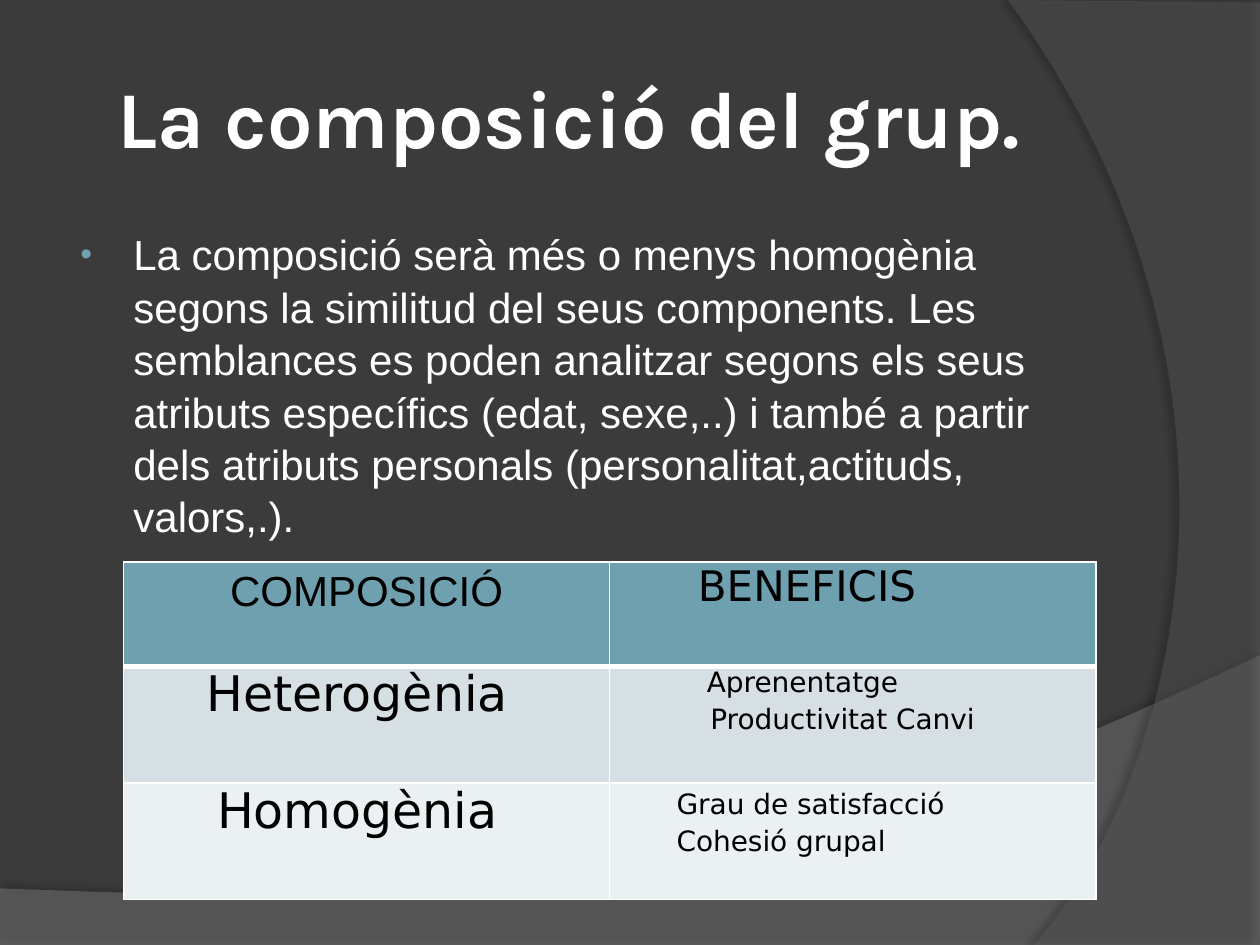
"""Build the slide on group composition, with its benefits table."""
from lxml import etree
from pptx import Presentation
from pptx.dml.color import RGBColor
from pptx.enum.text import MSO_ANCHOR, PP_ALIGN
from pptx.oxml.ns import qn
from pptx.util import Cm, Pt

CENTER, LEFT = PP_ALIGN.CENTER, PP_ALIGN.LEFT
MIDDLE = MSO_ANCHOR.MIDDLE
WHITE, BLACK, ACCENT = "FFFFFF", "000000", "6EA0B0"
BODY_FONT, TABLE_FONT = "Arial", "DejaVu Sans"

TITLE = "La composició del grup."
BODY = ("La composició serà més o menys homogènia segons la similitud del seus components. "
        "Les semblances es poden analitzar segons els seus atributs específics (edat, sexe,..) "
        "i també a partir dels atributs personals (personalitat,actituds, valors,.).")

WAVES = [
    {"start": (0, 17.91), "lines": [(0, 19.08), (25.4, 19.08), (25.4, 13.21)],
     "curve": [(14.2, 18.52), (9.93, 18.26), (0, 17.91)], "tail": [],
     "fill": ("7F7F7F", 45), "shadow": (35, 4, 3.5, 270)},
    {"start": (25.4, 0.05), "lines": [(25.4, 19.05), (20.85, 19.05)],
     "curve": [(23.75, 15.72), (25.86, 7.62), (20.32, 0)], "tail": [(25.4, 0.05)],
     "fill": ("5E5E5E", 40), "shadow": (45, 4, 4, 180)},
]

ROWS = [
    {"height": 2.1, "fill": ACCENT, "cells": [
        {"lines": [("COMPOSICIÓ", 0)], "font": BODY_FONT, "size": 24, "align": CENTER,
         "margins": (0.25, 0.13, 0.25, 0.13)},
        {"lines": [("BENEFICIS", 1.78)], "size": 24}]},
    {"height": 2.35, "fill": "D5DFE4", "cells": [
        {"lines": [("Heterogènia", 0)], "size": 28, "align": CENTER, "margins": (0, 0, 0.38, 0)},
        {"lines": [("Aprenentatge", 1.96), ("Productivitat Canvi", 2.03)], "size": 16}]},
    {"height": 2.35, "fill": "EBF0F2", "cells": [
        {"lines": [("Homogènia", 0)], "size": 28, "align": CENTER, "margins": (0, 0, 0.38, 0)},
        {"lines": [("Grau de satisfacció", 1.35), ("Cohesió grupal", 1.35)], "size": 16,
         "margins": (0, 0.11, 0, 0)}]},
]
TABLE_LEFT, TABLE_TOP, COLUMN_WIDTH = 2.49, 11.33, 9.8
CURVE_STEPS = 60


def color(value):
    return RGBColor.from_string(value)


def add_element(parent, tag, **attributes):
    element = etree.SubElement(parent, qn(tag))
    for name, value in attributes.items():
        element.set(name, str(value))
    return element


def add_color(parent, value, alpha=100):
    element = add_element(parent, "a:srgbClr", val=value)
    add_element(element, "a:alpha", val=alpha * 1000)


def format_runs(paragraph, font, size, value, bold=False):
    for run in paragraph.runs:
        run.font.name = font
        run.font.size = Pt(size)
        run.font.bold = bold
        run.font.color.rgb = color(value)


def set_margins(target, left, top, right, bottom):
    target.margin_left, target.margin_top = Cm(left), Cm(top)
    target.margin_right, target.margin_bottom = Cm(right), Cm(bottom)


def curve_points(start, control_1, control_2, end):
    points = []
    for step in range(1, CURVE_STEPS + 1):
        t = step / CURVE_STEPS
        weights = ((1 - t) ** 3, 3 * t * (1 - t) ** 2, 3 * t * t * (1 - t), t ** 3)
        corners = (start, control_1, control_2, end)
        points.append(tuple(sum(w * corner[axis] for w, corner in zip(weights, corners))
                            for axis in (0, 1)))
    return points


def add_wave(slide, wave):
    lines = wave["lines"]
    points = lines + curve_points(lines[-1], *wave["curve"]) + wave["tail"]
    builder = slide.shapes.build_freeform(*map(Cm, wave["start"]))
    builder.add_line_segments([(Cm(x), Cm(y)) for x, y in points], close=True)
    shape = builder.convert_to_shape()
    shape.line.fill.background()
    value, alpha = wave["fill"]
    shape.fill.solid()
    shape.fill.fore_color.rgb = color(value)
    properties = shape.element.spPr
    add_element(properties.find(".//" + qn("a:srgbClr")), "a:alpha", val=alpha * 1000)
    opacity, blur, distance, direction = wave["shadow"]
    effects = add_element(properties, "a:effectLst")
    shadow = add_element(effects, "a:outerShdw", blurRad=Pt(blur), dist=Pt(distance),
                         dir=direction * 60000, algn="ctr", rotWithShape=0)
    add_color(shadow, BLACK, opacity)


def add_text(slide, text, box, font, size, bold=False):
    text_frame = slide.shapes.add_textbox(*map(Cm, box)).text_frame
    text_frame.word_wrap = True
    text_frame.text = text
    paragraph = text_frame.paragraphs[0]
    format_runs(paragraph, font, size, WHITE, bold)
    return text_frame, paragraph


def add_bullet(paragraph):
    properties = paragraph._p.get_or_add_pPr()
    properties.set("marL", str(Cm(1.17)))
    properties.set("indent", str(-Cm(1.07)))
    add_color(add_element(properties, "a:buClr"), ACCENT)
    add_element(properties, "a:buSzPct", val=80000)
    add_element(properties, "a:buFont", typeface=BODY_FONT)
    add_element(properties, "a:buChar", char="•")


def fill_cell(cell, content, fill, top_width, bottom_width):
    properties = cell._tc.get_or_add_tcPr()
    widths = {"a:lnL": 1, "a:lnR": 1, "a:lnT": top_width, "a:lnB": bottom_width}
    for tag, width in widths.items():
        border = add_element(properties, tag, w=Pt(width))
        add_color(add_element(border, "a:solidFill"), WHITE)
    cell.fill.solid()
    cell.fill.fore_color.rgb = color(fill)
    set_margins(cell, *content.get("margins", (0, 0, 0, 0)))
    cell.text_frame.text = "\n".join(text for text, indent in content["lines"])
    for index, paragraph in enumerate(cell.text_frame.paragraphs):
        paragraph.alignment = content.get("align", LEFT)
        paragraph.space_before = Pt(3 if index else 0)
        paragraph._p.get_or_add_pPr().set("marL", str(Cm(content["lines"][index][1])))
        format_runs(paragraph, content.get("font", TABLE_FONT), content["size"], BLACK)


def add_benefits_table(slide):
    columns = len(ROWS[0]["cells"])
    height = sum(row["height"] for row in ROWS)
    table = slide.shapes.add_table(len(ROWS), columns, Cm(TABLE_LEFT), Cm(TABLE_TOP),
                                   Cm(COLUMN_WIDTH * columns), Cm(height)).table
    for row_index, row in enumerate(ROWS):
        table.rows[row_index].height = Cm(row["height"])
        top_width = 3 if row_index == 1 else 1
        bottom_width = 3 if row_index == 0 else 1
        for column_index, content in enumerate(row["cells"]):
            fill_cell(table.cell(row_index, column_index), content, row["fill"],
                      top_width, bottom_width)


def main():
    presentation = Presentation()
    presentation.slide_width, presentation.slide_height = Cm(25.4), Cm(19.05)
    slide = presentation.slides.add_slide(presentation.slide_layouts[6])
    slide.background.fill.solid()
    slide.background.fill.fore_color.rgb = color("3B3B3B")
    for wave in WAVES:
        add_wave(slide, wave)

    text_frame, paragraph = add_text(slide, TITLE, (1.27, 0.76, 20.75, 3.18), "Karla", 46, True)
    text_frame.vertical_anchor = MIDDLE
    set_margins(text_frame, 0.13, 0.13, 0.5, 0.13)
    paragraph.alignment = CENTER

    text_frame, paragraph = add_text(slide, BODY, (1.27, 4.45, 20.75, 12.57), BODY_FONT, 24)
    paragraph.line_spacing = 1.04
    add_bullet(paragraph)

    add_benefits_table(slide)
    presentation.save("out.pptx")


if __name__ == "__main__":
    main()
